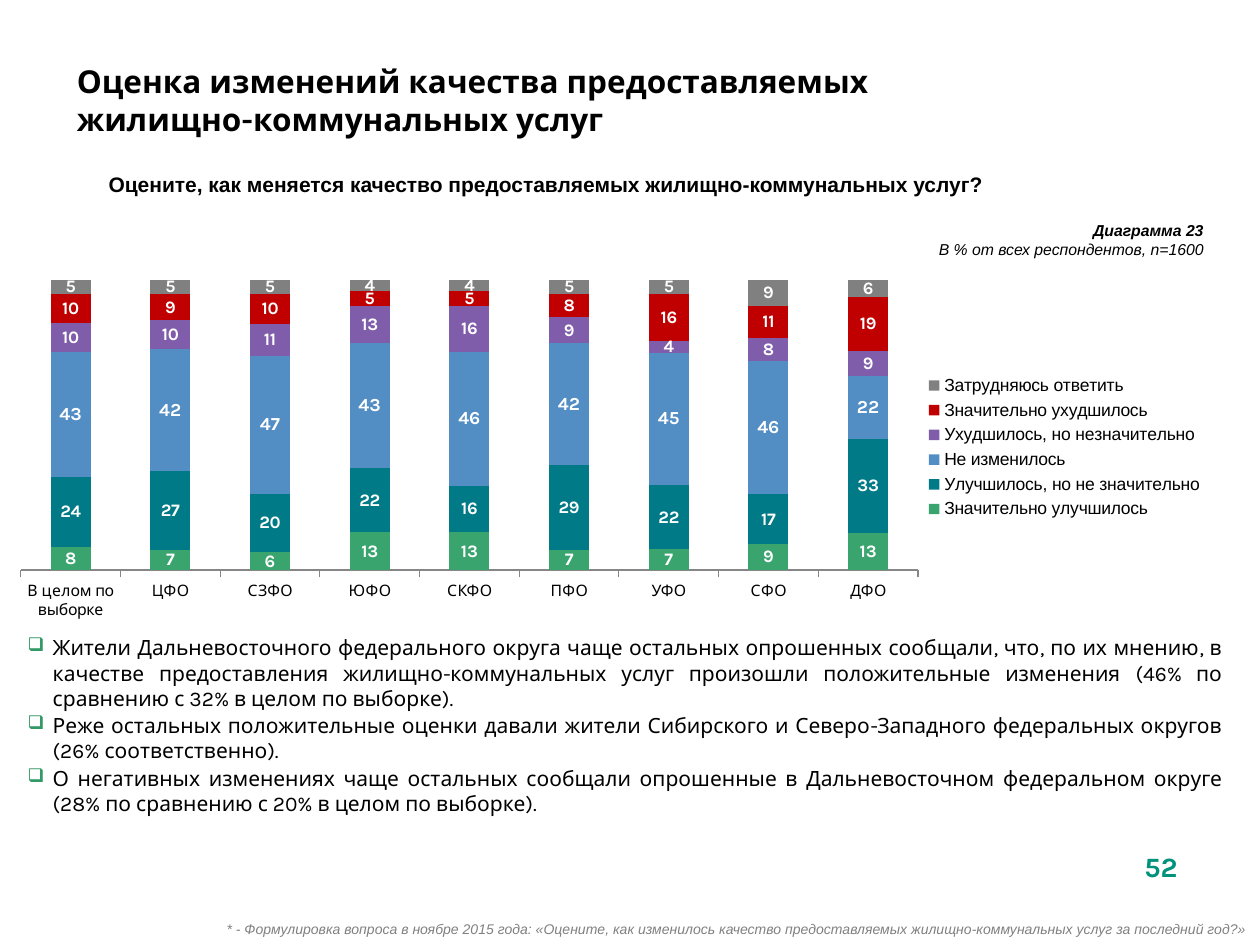
from lxml import etree
from pptx import Presentation
from pptx.chart.data import CategoryChartData
from pptx.dml.color import RGBColor
from pptx.enum.chart import XL_CHART_TYPE, XL_LABEL_POSITION, XL_LEGEND_POSITION, XL_TICK_MARK
from pptx.enum.text import MSO_ANCHOR, MSO_AUTO_SIZE, PP_ALIGN
from pptx.oxml.ns import qn
from pptx.util import Inches, Pt

STACKED = XL_CHART_TYPE.COLUMN_STACKED_100
CENTER_LABEL = XL_LABEL_POSITION.CENTER
LEGEND_RIGHT = XL_LEGEND_POSITION.RIGHT
TICK_OUT, TICK_NONE = XL_TICK_MARK.OUTSIDE, XL_TICK_MARK.NONE
TOP, MIDDLE, BOTTOM = MSO_ANCHOR.TOP, MSO_ANCHOR.MIDDLE, MSO_ANCHOR.BOTTOM
FIXED, GROW = MSO_AUTO_SIZE.NONE, MSO_AUTO_SIZE.SHAPE_TO_FIT_TEXT
LEFT, CENTER, RIGHT, JUSTIFY = PP_ALIGN.LEFT, PP_ALIGN.CENTER, PP_ALIGN.RIGHT, PP_ALIGN.JUSTIFY

WIDTH, HEIGHT = Inches(10), Inches(7.5)
COLUMN, ROW = WIDTH / 100, HEIGHT / 75
COLORS = {
    "text": "000000", "white": "FFFFFF", "note": "808080", "number": "00927B",
    "bullet": "339966", "axis": "868686", "much_better": "3AA46F", "better": "007A86",
    "same": "528DC4", "worse": "805DAA", "much_worse": "C00000", "unsure": "808080",
}
DISTRICTS = ["В целом по выборке", "ЦФО", "СЗФО", "ЮФО", "СКФО", "ПФО", "УФО", "СФО", "ДФО"]
ANSWERS = [
    ("Значительно улучшилось", "much_better", [8, 7, 6, 13, 13, 7, 7, 9, 13]),
    ("Улучшилось, но не значительно", "better", [24, 27, 20, 22, 16, 29, 22, 17, 33]),
    ("Не изменилось", "same", [43, 42, 47, 43, 46, 42, 45, 46, 22]),
    ("Ухудшилось, но незначительно", "worse", [10, 10, 11, 13, 16, 9, 4, 8, 9]),
    ("Значительно ухудшилось", "much_worse", [10, 9, 10, 5, 5, 8, 16, 11, 19]),
    ("Затрудняюсь ответить", "unsure", [5, 5, 5, 4, 4, 5, 5, 9, 6]),
]
FINDINGS = [
    "Жители Дальневосточного федерального округа чаще остальных опрошенных сообщали, что, "
    "по их мнению, в качестве предоставления жилищно-коммунальных услуг произошли "
    "положительные изменения (46% по сравнению с 32% в целом по выборке).",
    "Реже остальных положительные оценки давали жители Сибирского и Северо-Западного "
    "федеральных округов (26% соответственно).",
    "О негативных изменениях чаще остальных сообщали опрошенные в Дальневосточном "
    "федеральном округе (28% по сравнению с 20% в целом по выборке).",
]


def place(columns, rows, width, height):
    """Turn grid columns and rows into slide lengths."""
    return int(columns * COLUMN), int(rows * ROW), int(width * COLUMN), int(height * ROW)


def style_font(font, size, name="Karla", color="text", bold=False, italic=False):
    """Format a font."""
    font.size, font.name, font.bold, font.italic = Pt(size), name, bold, italic
    font.color.rgb = RGBColor.from_string(COLORS[color])


def add_bullet(paragraph):
    """Give a paragraph a hanging square bullet."""
    properties = paragraph._p.get_or_add_pPr()
    properties.set("marL", str(Inches(0.2)))
    properties.set("indent", str(-Inches(0.2)))
    color = etree.SubElement(properties, qn("a:buClr"))
    etree.SubElement(color, qn("a:srgbClr")).set("val", COLORS["bullet"])
    etree.SubElement(properties, qn("a:buSzPct")).set("val", "90000")
    etree.SubElement(properties, qn("a:buChar")).set("char", "❑")


def write_text(shape, lines, align=LEFT, anchor=TOP, fit=FIXED, bullets=False,
               bold_lines=(), **font_format):
    """Fill a shape with one formatted paragraph per line."""
    frame = shape.text_frame
    frame.word_wrap, frame.auto_size, frame.vertical_anchor = True, fit, anchor
    for index, line in enumerate(lines):
        paragraph = frame.add_paragraph() if index else frame.paragraphs[0]
        if bullets:
            add_bullet(paragraph)
            paragraph.space_before = Pt(1.2 if index else 0)
        paragraph.alignment = align
        run = paragraph.add_run()
        run.text = line
        style_font(run.font, bold=index in bold_lines, **font_format)


def add_text(slide, box, lines, **text_format):
    """Add a text box."""
    write_text(slide.shapes.add_textbox(*box), lines, **text_format)


def add_heading(slide, box):
    """Place the title."""
    title = slide.shapes.title
    title.left, title.top, title.width, title.height = box
    write_text(title, ["Оценка изменений качества предоставляемых жилищно-коммунальных услуг"],
               anchor=MIDDLE, size=18, bold_lines=[0])


def set_plot_area(plot, **shares):
    """Fix the inner plot area as shares of the chart."""
    area = plot._element.getparent()
    for old in area.findall(qn("c:layout")):
        area.remove(old)
    layout = etree.Element(qn("c:layout"))
    area.insert(0, layout)
    manual = etree.SubElement(layout, qn("c:manualLayout"))
    settings = {"layoutTarget": "inner", "xMode": "edge", "yMode": "edge", **shares}
    for key, value in settings.items():
        etree.SubElement(manual, qn(f"c:{key}")).set("val", str(value))


def style_series(series, color):
    """Colour a series and its value labels."""
    series.format.fill.solid()
    series.format.fill.fore_color.rgb = RGBColor.from_string(COLORS[color])
    labels = series.data_labels
    labels.show_value = True
    labels.position = CENTER_LABEL
    labels.number_format, labels.number_format_is_linked = "#,##0", False
    style_font(labels.font, 10.5 if color == "same" else 10, color="white", bold=True)


def add_answer_chart(slide, box):
    """Place the stacked chart of answers by district."""
    data = CategoryChartData(number_format="#,##0")
    data.categories = DISTRICTS
    for name, _, values in ANSWERS:
        data.add_series(name, values)
    chart = slide.shapes.add_chart(STACKED, *box, data).chart
    chart.has_title = False
    style_font(chart.font, 10)
    chart.has_legend = True
    chart.legend.position = LEGEND_RIGHT
    chart.legend.include_in_layout = False
    style_font(chart.legend.font, 10, "Arial")
    chart.value_axis.visible = False
    chart.value_axis.has_major_gridlines = False
    axis = chart.category_axis
    axis.major_tick_mark, axis.minor_tick_mark = TICK_OUT, TICK_NONE
    axis.format.line.color.rgb = RGBColor.from_string(COLORS["axis"])
    style_font(axis.tick_labels.font, 9)
    plot = chart.plots[0]
    plot.gap_width, plot.overlap, plot.vary_by_categories = 150, 100, False
    set_plot_area(plot, x=0.013, y=0.041, w=0.741, h=0.795)
    for series, (_, color, _) in zip(plot.series, ANSWERS):
        style_series(series, color)


def add_captions(slide, question_box, caption_box):
    """Place the survey question and the chart caption."""
    add_text(slide, question_box,
             ["Оцените, как меняется качество предоставляемых жилищно-коммунальных услуг?"],
             align=CENTER, anchor=BOTTOM, fit=GROW, size=12, name="Arial", bold_lines=[0])
    add_text(slide, caption_box, ["Диаграмма 23", "В % от всех респондентов, n=1600"],
             align=RIGHT, fit=GROW, size=9, name="Arial", italic=True, bold_lines=[0])


def add_footer(slide, number_box, note_box):
    """Place the page number and the footnote."""
    add_text(slide, number_box, ["52"], align=CENTER, size=16, color="number", bold_lines=[0])
    add_text(slide, note_box,
             ["* - Формулировка вопроса в ноябре 2015 года: «Оцените, как изменилось качество "
              "предоставляемых жилищно-коммунальных услуг за последний год?»"],
             align=RIGHT, fit=GROW, size=8, name="Arial", color="note", italic=True)


def main():
    """Build and save the slide."""
    presentation = Presentation()
    presentation.slide_width, presentation.slide_height = WIDTH, HEIGHT
    slide = presentation.slides.add_slide(presentation.slide_layouts[5])
    add_heading(slide, place(5.1, 4.4, 78, 7.1))
    add_captions(slide, place(2, 13.1, 82.7, 3), place(44.9, 17, 51.6, 4))
    add_answer_chart(slide, place(0.4, 21, 96.1, 29))
    add_text(slide, place(1.2, 49.9, 96.9, 15.1), FINDINGS, align=JUSTIFY, bullets=True, size=12)
    add_footer(slide, place(87.8, 66.9, 8.7, 5.2), place(5.5, 72.6, 94.5, 2.4))
    presentation.save("out.pptx")


if __name__ == "__main__":
    main()
